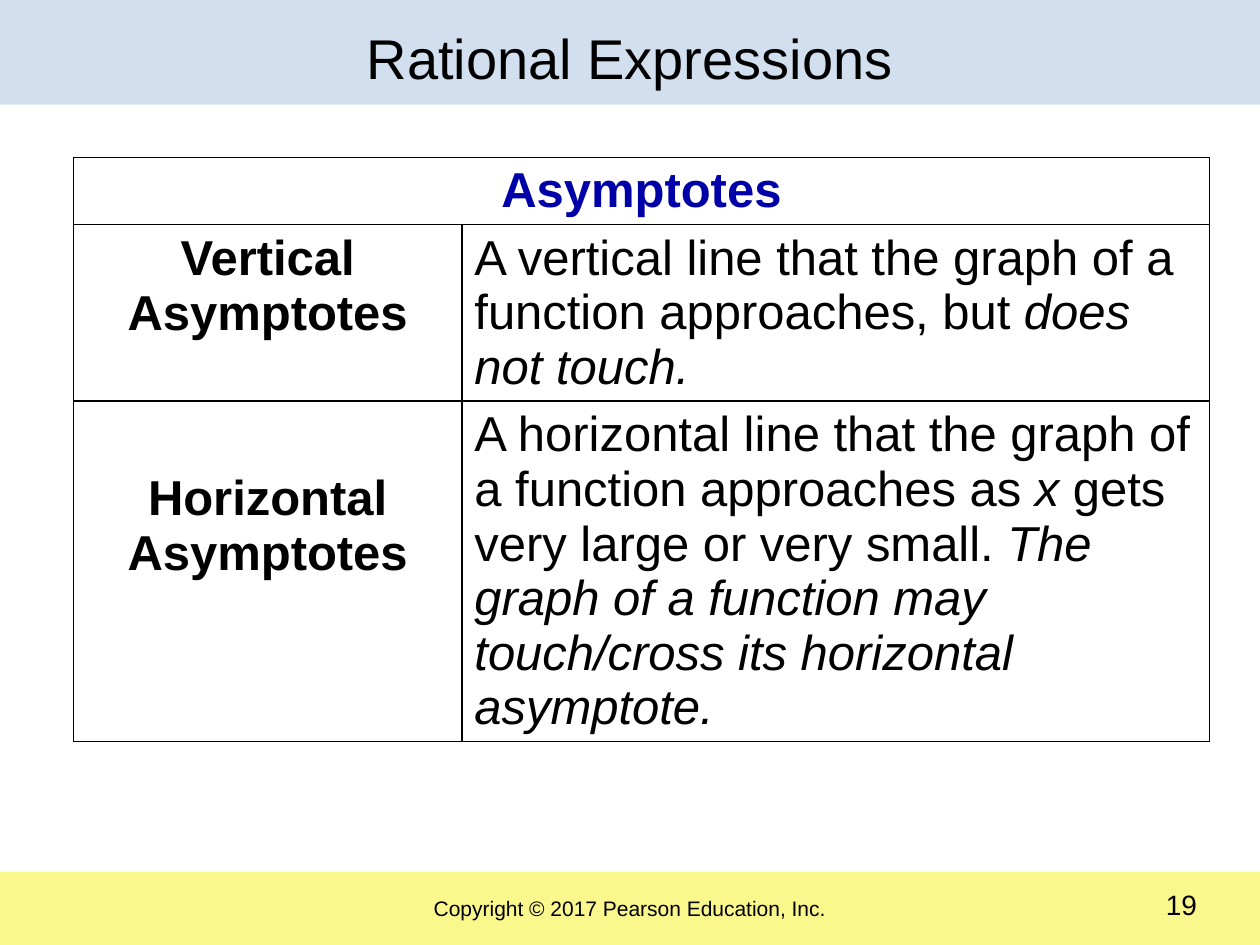
from dataclasses import dataclass

from lxml import etree
from pptx import Presentation
from pptx import oxml
from pptx import util as u
from pptx.dml.color import RGBColor
from pptx.enum import shapes, text
from pptx.oxml import ns


@dataclass(frozen=True)
class Theme:
    font: str = "Arial"
    ink: str = "000000"
    heading: str = "0000A8"
    band: str = "4F81BD"
    band_opacity: int = 25
    footer: str = "FAF78D"
    title_size: int = 32
    table_size: int = 28
    number_size: int = 16
    footer_size: int = 12
    border: int = 1


THEME = Theme()
WIDTH, HEIGHT = 25.4, 19.05
CENTER, RIGHT, LEFT = text.PP_ALIGN.CENTER, text.PP_ALIGN.RIGHT, text.PP_ALIGN.LEFT

# Each description is a list of (words, italic) pieces.
ASYMPTOTES = [
    ("Vertical Asymptotes", 0.13, [
        ("A vertical line that the graph of a function approaches, but", False),
        (" does not touch.", True)]),
    ("Horizontal Asymptotes", 1.42, [
        ("A horizontal line that the graph of a function approaches as ", False),
        ("x", True),
        (" gets very large or very small. ", False),
        ("The graph of a function may touch/cross its horizontal asymptote.", True)]),
]


def write(frame, pieces, size, align=CENTER, color=THEME.ink, bold=False):
    para = frame.paragraphs[0]
    para.alignment = align
    for words, italic in pieces:
        span = para.add_run()
        span.text = words
        span.font.name = THEME.font
        span.font.size = u.Pt(size)
        span.font.bold = bold
        span.font.italic = italic
        span.font.color.rgb = RGBColor.from_string(color)


def place(item, left, top, width, height):
    item.left, item.top = u.Cm(left), u.Cm(top)
    item.width, item.height = u.Cm(width), u.Cm(height)


def add_band(page, left, top, width, height, color):
    band = page.shapes.add_shape(shapes.MSO_SHAPE.RECTANGLE, u.Cm(left), u.Cm(top),
                                 u.Cm(width), u.Cm(height))
    band.shadow.inherit = False
    band.fill.solid()
    band.fill.fore_color.rgb = RGBColor.from_string(color)
    band.line.fill.background()
    return band


def add_header(page, left, top, width, height):
    band = add_band(page, left, top, width, height, THEME.band)
    color = band.element.spPr.find(".//" + ns.qn("a:srgbClr"))
    etree.SubElement(color, ns.qn("a:alpha"), val=str(THEME.band_opacity * 1000))
    title = page.shapes.title
    place(title, left, top + 0.1, width, height)
    title.text_frame.vertical_anchor = text.MSO_ANCHOR.MIDDLE
    write(title.text_frame, [("Rational Expressions", False)], THEME.title_size)
    band.element.addnext(title.element)  # keeps the title in front of its band


def add_footer(page, left, top, width, height):
    band = add_band(page, left, top, width, height, THEME.footer)
    band.text_frame.vertical_anchor = text.MSO_ANCHOR.MIDDLE
    write(band.text_frame, [("Copyright © 2017 Pearson Education, Inc.", False)],
          THEME.footer_size)
    box = page.shapes.add_textbox(u.Cm(left + width - 6.93), u.Cm(top + 0.25),
                                  u.Cm(5.91), u.Cm(0.84))
    box.text_frame.word_wrap = True
    box.text_frame.vertical_anchor = text.MSO_ANCHOR.MIDDLE
    write(box.text_frame, [("19", False)], THEME.number_size, RIGHT)


def format_cell(cell):
    """Clear the fill and draw all four borders."""
    properties = cell._tc.get_or_add_tcPr()
    for side in ("lnL", "lnR", "lnT", "lnB"):
        properties.append(oxml.parse_xml(
            f'<a:{side} {ns.nsdecls("a")} w="{u.Pt(THEME.border)}"><a:solidFill>'
            f'<a:srgbClr val="{THEME.ink}"/></a:solidFill></a:{side}>'))
    cell.fill.background()


def add_asymptotes(page, left, top, column_widths, row_heights):
    frame = page.shapes.add_table(len(row_heights), len(column_widths),
                                  u.Cm(left), u.Cm(top),
                                  u.Cm(sum(column_widths)), u.Cm(sum(row_heights)))
    table = frame.table
    table.first_row = table.horz_banding = False
    for column, width in zip(table.columns, column_widths):
        column.width = u.Cm(width)
    for row, height in zip(table.rows, row_heights):
        row.height = u.Cm(height)
    for cell in table.iter_cells():
        format_cell(cell)
    heading = table.cell(0, 0)
    heading.merge(table.cell(0, 1))
    write(heading.text_frame, [("Asymptotes", False)], THEME.table_size,
          color=THEME.heading, bold=True)
    for index, (name, margin, description) in enumerate(ASYMPTOTES, start=1):
        label, detail = table.cell(index, 0), table.cell(index, 1)
        label.margin_top = u.Cm(margin)
        write(label.text_frame, [(name, False)], THEME.table_size, bold=True)
        write(detail.text_frame, description, THEME.table_size, LEFT)


def main():
    deck = Presentation()
    deck.slide_width, deck.slide_height = u.Cm(WIDTH), u.Cm(HEIGHT)
    page = deck.slides.add_slide(deck.slide_layouts.get_by_name("Title Only"))
    add_footer(page, 0, 17.57, WIDTH, HEIGHT - 17.57)
    add_header(page, 0, 0, WIDTH, 2.11)
    add_asymptotes(page, 1.48, 3.17, [7.83, 15.07], [1.36, 3.55, 6.85])
    deck.save("out.pptx")


if __name__ == "__main__":
    main()
